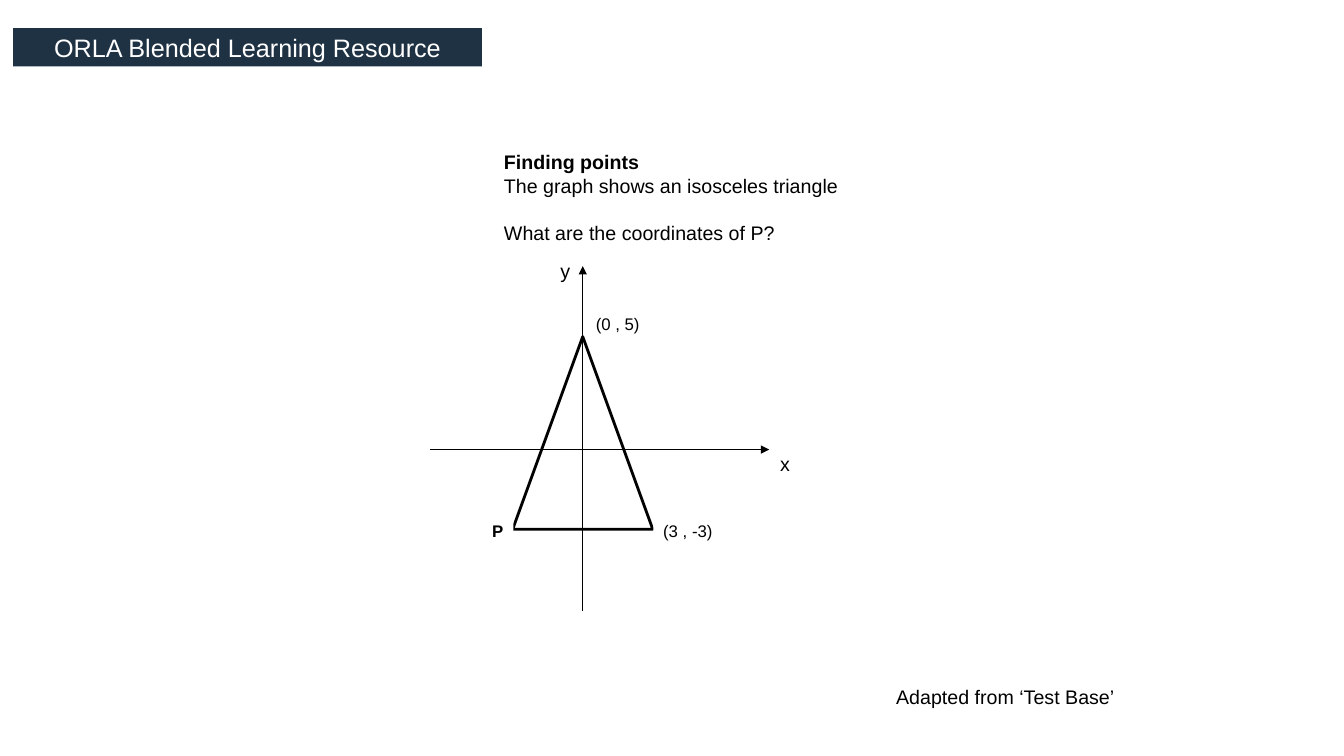
from dataclasses import dataclass
from lxml import etree
from pptx import Presentation, util as u
from pptx.dml.color import RGBColor
from pptx.enum import shapes, text
from pptx.oxml.ns import qn

# Content: text runs are (wording, bold); boxes are percentages of the slide
HEADER = ("ORLA Blended Learning Resource", (0.98, 3.73, 34.88, 5.07))
QUESTION = [("Finding points", True),
            ("The graph shows an isosceles triangle", False),
            ("What are the coordinates of P?", False)]
QUESTION_BOX = (36.76, 19.2, 26.56, 13.87)
CREDIT = ("Adapted from ‘Test Base’", (65.94, 90, 17.85, 4.53))
AXIS_NAMES = [("y", (40.96, 33.6, 2.25, 4.53)),
              ("x", (57.31, 59.07, 2.25, 4.53))]
POINTS = [("(3 , -3)", False, (48.61, 68.27, 5.25, 4)),
          ("(0 , 5)", False, (43.59, 40.8, 4.8, 4)),
          ("P", True, (35.11, 68.27, 3.08, 4))]

# Graph geometry, in percentages of the slide
ORIGIN_X, ORIGIN_Y = 43.36, 59.47
X_AXIS = (32.03, 57.24)
Y_AXIS = (80.8, 35.2)
APEX_Y, BASE_Y, HALF_BASE = 44.53, 70, 5.21


@dataclass(frozen=True)
class Theme:
    font: str = "Arial"
    navy: RGBColor = RGBColor(0x1F, 0x32, 0x44)
    black: RGBColor = RGBColor(0, 0, 0)
    white: RGBColor = RGBColor(255, 255, 255)
    title: int = 18
    body: int = 14
    point: int = 12
    axis_line: float = 0.75
    triangle_line: float = 2


T = Theme()
prs = Presentation()
prs.slide_width, prs.slide_height = u.Inches(13.33), u.Inches(7.5)
s = prs.slides.add_slide(prs.slide_layouts[6])


def px(share):
    return int(prs.slide_width * share / 100)


def py(share):
    return int(prs.slide_height * share / 100)


def place(box):
    left, top, width, height = box
    return px(left), py(top), px(width), py(height)


def add_shape(kind, box, fill=None):
    sp = s.shapes.add_shape(kind, *place(box))
    sp.shadow.inherit = False
    if fill is None:
        sp.fill.background()
    else:
        sp.fill.solid()
        sp.fill.fore_color.rgb = fill
    sp.line.fill.background()
    return sp


def write(sp, lines, size, color=T.black, align=text.PP_ALIGN.LEFT,
          anchor=text.MSO_ANCHOR.TOP):
    tf = sp.text_frame
    tf.word_wrap = False
    tf.vertical_anchor = anchor
    for i, (words, bold) in enumerate(lines):
        p = tf.add_paragraph() if i else tf.paragraphs[0]
        p.alignment = align
        r = p.add_run()
        r.text = words
        r.font.name, r.font.size, r.font.bold = T.font, u.Pt(size), bold
        r.font.color.rgb = color
    return tf


def add_text(lines, box):
    return write(s.shapes.add_textbox(*place(box)), lines, T.body)


def add_axis(x1, y1, x2, y2):
    c = s.shapes.add_connector(shapes.MSO_CONNECTOR.STRAIGHT,
                               px(x1), py(y1), px(x2), py(y2))
    c.line.color.rgb = T.black
    c.line.width = u.Pt(T.axis_line)
    etree.SubElement(c.line._get_or_add_ln(), qn("a:tailEnd"), type="triangle")
    etree.SubElement(c._element.spPr, qn("a:effectLst"))


# Header and credit
words, box = HEADER
write(add_shape(shapes.MSO_SHAPE.RECTANGLE, box, T.navy), [(words, False)],
      T.title, T.white, text.PP_ALIGN.CENTER, text.MSO_ANCHOR.MIDDLE)
words, box = CREDIT
add_text([(words, False)], box)

# Axes and triangle
add_axis(ORIGIN_X, Y_AXIS[0], ORIGIN_X, Y_AXIS[1])
add_axis(X_AXIS[0], ORIGIN_Y, X_AXIS[1], ORIGIN_Y)
triangle = add_shape(shapes.MSO_SHAPE.ISOSCELES_TRIANGLE,
                     (ORIGIN_X - HALF_BASE, APEX_Y, 2 * HALF_BASE, BASE_Y - APEX_Y))
triangle.line.color.rgb = T.black
triangle.line.width = u.Pt(T.triangle_line)

# Axis names and question, with a line's gap before the question itself
for words, box in AXIS_NAMES:
    add_text([(words, False)], box)
tf = add_text(QUESTION, QUESTION_BOX)
tf.paragraphs[-1].space_before = u.Pt(1.2 * T.body)

# Point labels; P sits against the triangle's corner
for words, bold, box in POINTS:
    align = text.PP_ALIGN.RIGHT if bold else text.PP_ALIGN.LEFT
    write(add_shape(shapes.MSO_SHAPE.RECTANGLE, box, T.white),
          [(words, bold)], T.point, align=align)

prs.save("out.pptx")
